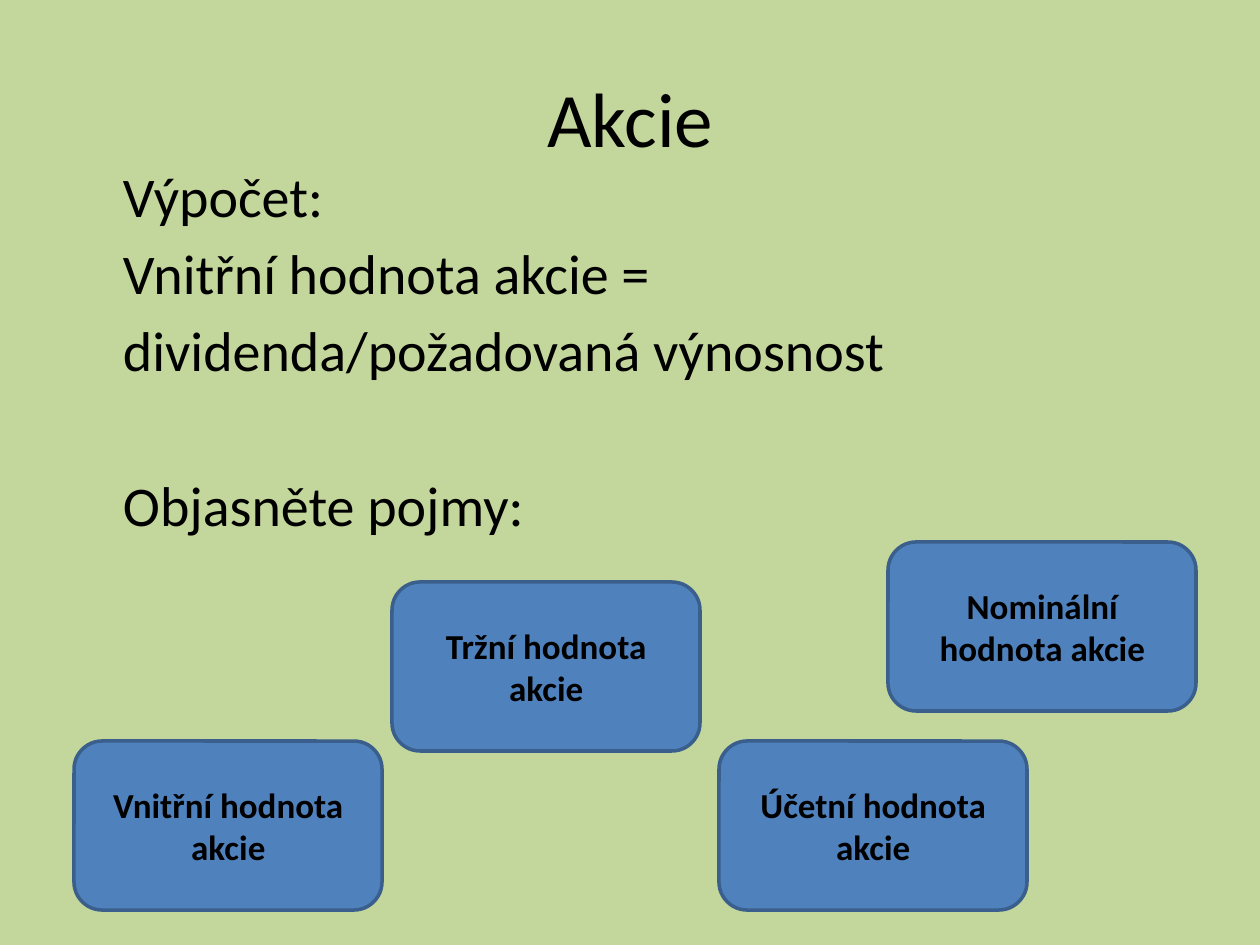
from pptx import Presentation
from pptx.dml.color import RGBColor
from pptx.enum.shapes import MSO_SHAPE as SHAPE
from pptx.enum.text import MSO_ANCHOR as ANCHOR, PP_ALIGN as ALIGN
from pptx.util import Inches, Pt

PX = Inches(1) / 126
COLORS = {"bg": "C3D69B", "box": "4F81BD", "edge": "3A5F8C", "text": "000000"}


def px(*lengths):
    return [round(n * PX) for n in lengths]


def write(sp, lines, size, bold=False, align=ALIGN.CENTER,
          anchor=ANCHOR.MIDDLE, left=13, before=0):
    """Fill a shape with (text, extra space before in points) paragraphs."""
    tf = sp.text_frame
    tf.word_wrap = True
    tf.vertical_anchor = anchor
    tf.margin_left = px(left)[0]
    for i, (text, extra) in enumerate(lines):
        p = tf.paragraphs[0] if i == 0 else tf.add_paragraph()
        p.alignment = align
        p.space_before = Pt(before + extra)
        r = p.add_run()
        r.text = text
        r.font.name = "Calibri"
        r.font.size = Pt(size)
        r.font.bold = bold
        r.font.color.rgb = RGBColor.from_string(COLORS["text"])


prs = Presentation()
prs.slide_width, prs.slide_height = px(1260, 945)
s = prs.slides.add_slide(prs.slide_layouts[6])
s.background.fill.solid()
s.background.fill.fore_color.rgb = RGBColor.from_string(COLORS["bg"])

title = s.shapes.add_textbox(*px(63, 38, 1134, 158))
write(title, [("Akcie", 0)], 44)

body = s.shapes.add_textbox(*px(63, 155, 1134, 689))
write(body, [
    ("Výpočet:", 0),
    ("Vnitřní hodnota akcie =", 0),
    ("dividenda/požadovaná výnosnost", 0),
    ("Objasněte pojmy:", 44.7),
], 32, align=ALIGN.LEFT, anchor=ANCHOR.TOP, left=60, before=5.6)

terms = [
    ("Nominální hodnota akcie", 888, 542),
    ("Účetní hodnota akcie", 719, 741),
    ("Tržní hodnota akcie", 392, 582),
    ("Vnitřní hodnota akcie", 74, 741),
]
for term, x, y in terms:
    sp = s.shapes.add_shape(SHAPE.ROUNDED_RECTANGLE, *px(x, y, 308, 169))
    sp.shadow.inherit = False
    sp.fill.solid()
    sp.fill.fore_color.rgb = RGBColor.from_string(COLORS["box"])
    sp.line.color.rgb = RGBColor.from_string(COLORS["edge"])
    sp.line.width = Pt(2)
    write(sp, [(term, 0)], 20, bold=True)

prs.save("out.pptx")
